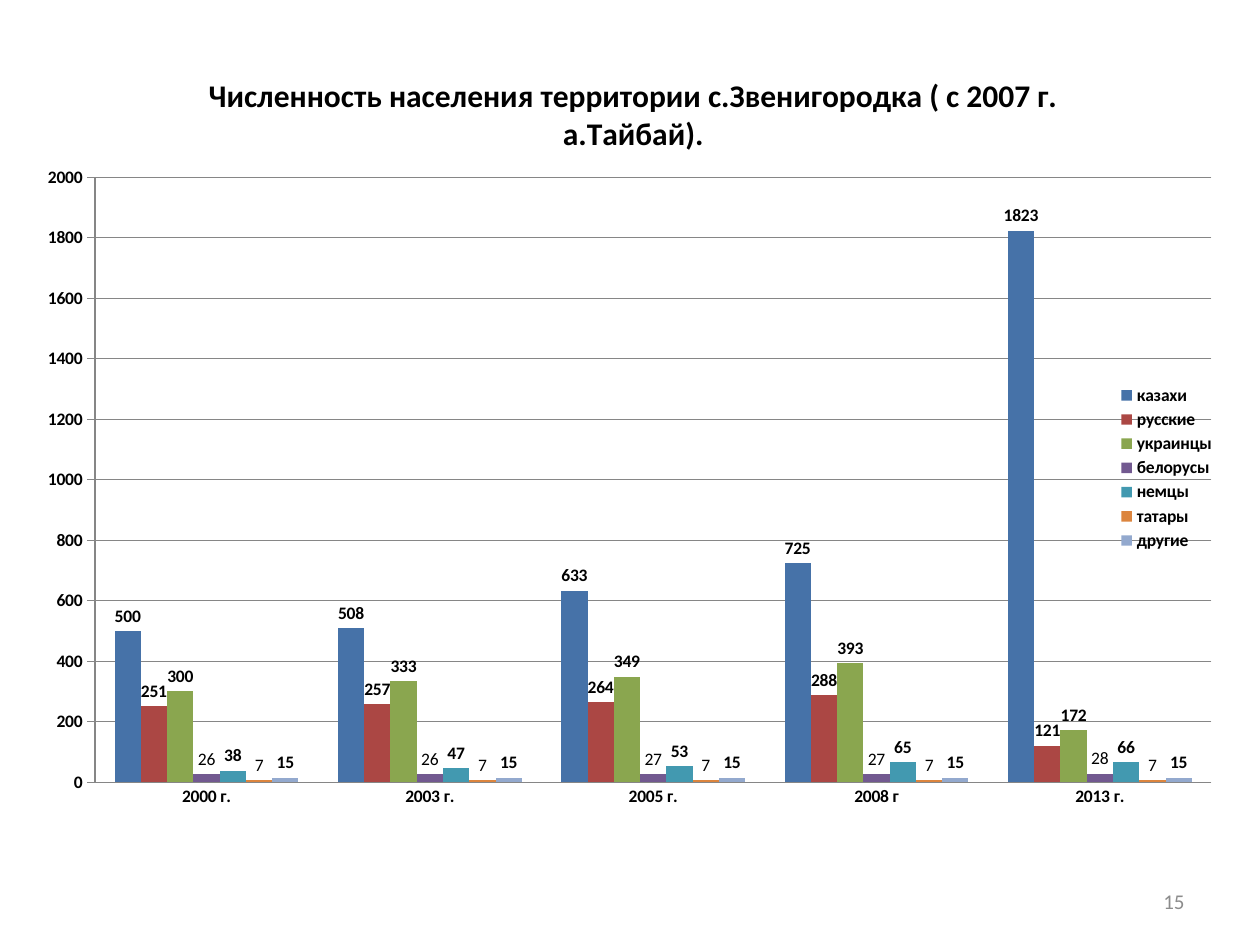
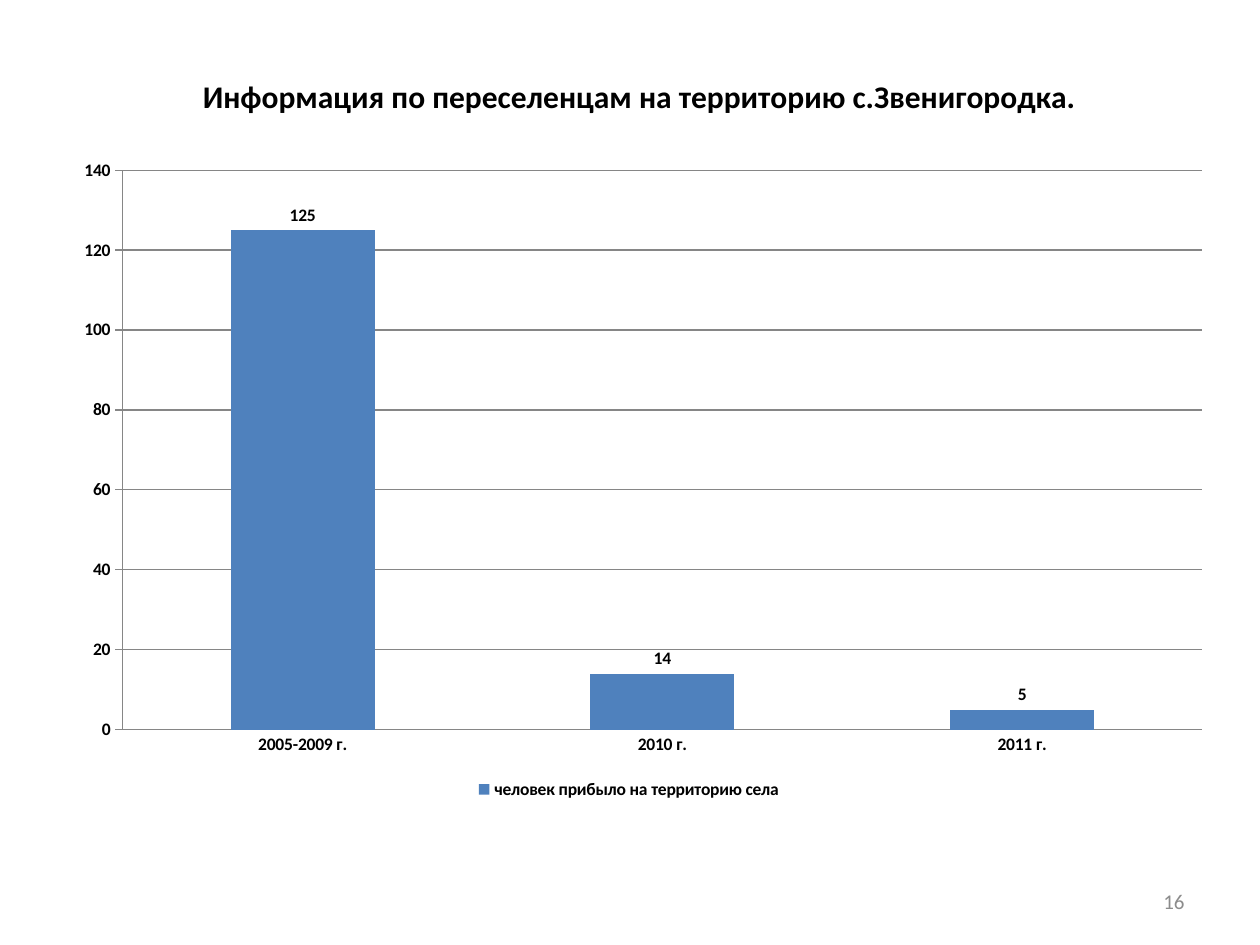
import pptx
import pptx.chart.data
import pptx.dml.color
import pptx.enum.chart
import pptx.enum.text
import pptx.oxml
import pptx.oxml.ns
import pptx.util

Inches = pptx.util.Inches
Pt = pptx.util.Pt
qn = pptx.oxml.ns.qn

FONT = "Calibri"
HEX = {
    "text": "000000", "page": "8C8C8C", "grid": "868686", "blue": "4F81BD",
    "navy": "4672A8", "red": "AB4744", "green": "8AA64F", "plum": "725990",
    "teal": "4299B0", "amber": "DC853E", "pale": "93A9CE",
}
PLOT = (0.057, 0.166, 0.93, 0.695)


def tint(name):
    return pptx.dml.color.RGBColor.from_string(HEX[name])


def place(chart, tag, index, box, inner=False):
    """Give a chart part a fixed place, as fractions of the chart."""
    node = chart.element.find("./" + qn("c:chart") + "/" + qn(tag))
    for old in node.findall(qn("c:layout")):
        node.remove(old)
    parts = [("layoutTarget", "inner")] if inner else []
    parts += [("xMode", "edge"), ("yMode", "edge")]
    parts += zip("xywh", box)
    body = "".join(f'<c:{name} val="{val}"/>' for name, val in parts)
    node.insert(index, pptx.oxml.parse_xml(
        f'<c:layout {pptx.oxml.ns.nsdecls("c")}>'
        f"<c:manualLayout>{body}</c:manualLayout></c:layout>"))


class Deck:
    def __init__(self):
        self.show = pptx.Presentation()
        self.show.slide_width = Inches(10)
        self.show.slide_height = Inches(7.5)
        self.slide = None

    def style(self, font, size, color="text", bold=False):
        font.name, font.size, font.bold = FONT, Pt(size), bold
        font.color.rgb = tint(color)

    def page(self, number):
        self.slide = self.show.slides.add_slide(self.show.slide_layouts[6])
        box = self.slide.shapes.add_textbox(
            Inches(7.17), Inches(6.95), Inches(2.33), Inches(0.4))
        frame = box.text_frame
        frame.word_wrap = True
        frame.vertical_anchor = pptx.enum.text.MSO_ANCHOR.MIDDLE
        para = frame.paragraphs[0]
        para.text = str(number)
        para.alignment = pptx.enum.text.PP_ALIGN.RIGHT
        self.style(para.font, 12, "page")

    def chart(self, box, title, spot, cats, rows, top, step, key):
        data = pptx.chart.data.CategoryChartData()
        data.categories = cats
        for name, vals, *_ in rows:
            data.add_series(name, vals)
        chart = self.slide.shapes.add_chart(
            pptx.enum.chart.XL_CHART_TYPE.COLUMN_CLUSTERED,
            *map(Inches, box), data).chart
        self.style(chart.font, 10)
        place(chart, "c:plotArea", 0, PLOT, True)
        self.title(chart, title, spot)
        self.axes(chart, top, step)
        self.bars(chart, rows)
        self.legend(chart, key)

    def title(self, chart, text, spot):
        chart.has_title = True
        para = chart.chart_title.text_frame.paragraphs[0]
        para.text = text
        self.style(para.font, 18, bold=True)
        place(chart, "c:title", 1, spot)

    def axes(self, chart, top, step):
        marks = pptx.enum.chart.XL_TICK_MARK
        cat, val = chart.category_axis, chart.value_axis
        for axis, mark in ((cat, marks.NONE), (val, marks.CROSS)):
            axis.major_tick_mark, axis.minor_tick_mark = mark, marks.NONE
            self.style(axis.tick_labels.font, 10, bold=True)
            axis.format.line.color.rgb = tint("grid")
        val.minimum_scale, val.maximum_scale, val.major_unit = 0, top, step
        val.has_major_gridlines = True
        val.major_gridlines.format.line.color.rgb = tint("grid")

    def bars(self, chart, rows):
        plot = chart.plots[0]
        plot.gap_width, plot.overlap = 150, 0
        plot.vary_by_categories = False
        for bar, (_, _, color, bold) in zip(plot.series, rows):
            bar.format.fill.solid()
            bar.format.fill.fore_color.rgb = tint(color)
            bar.invert_if_negative = False
            labels = bar.data_labels
            labels.show_value = True
            labels.position = pptx.enum.chart.XL_LABEL_POSITION.OUTSIDE_END
            self.style(labels.font, 10, bold=bold)

    def legend(self, chart, key):
        chart.has_legend = True
        legend = chart.legend
        legend.position = pptx.enum.chart.XL_LEGEND_POSITION.RIGHT
        legend.include_in_layout = False
        self.style(legend.font, 10, bold=True)
        place(chart, "c:legend", 1, key)


def main():
    deck = Deck()

    # Population by ethnic group
    deck.page(15)
    deck.chart(
        (0.21, 0.26, 9.53, 6.91),
        "Численность населения территории с.Звенигородка ( с 2007 г. а.Тайбай).",
        (0.147, 0.04),
        ["2000 г.", "2003 г.", "2005 г.", "2008 г", "2013 г."],
        [("казахи", (500, 508, 633, 725, 1823), "navy", True),
         ("русские", (251, 257, 264, 288, 121), "red", True),
         ("украинцы", (300, 333, 349, 393, 172), "green", True),
         ("белорусы", (26, 26, 27, 27, 28), "plum", False),
         ("немцы", (38, 47, 53, 65, 66), "teal", True),
         ("татары", (7,) * 5, "amber", False),
         ("другие", (15,) * 5, "pale", True)],
        2000, 200, (0.908, 0.4, 0.083, 0.2))

    # Settlers who arrived in the village
    deck.page(16)
    deck.chart(
        (0.45, 0.29, 9.21, 6.39),
        "Информация по переселенцам на территорию с.Звенигородка.",
        (0.121, 0.04),
        ["2005-2009 г.", "2010 г.", "2011 г."],
        [("человек прибыло на территорию села", (125, 14, 5), "blue", True)],
        140, 20, (0.353, 0.915, 0.28, 0.04))

    deck.show.save("out.pptx")


if __name__ == "__main__":
    main()
